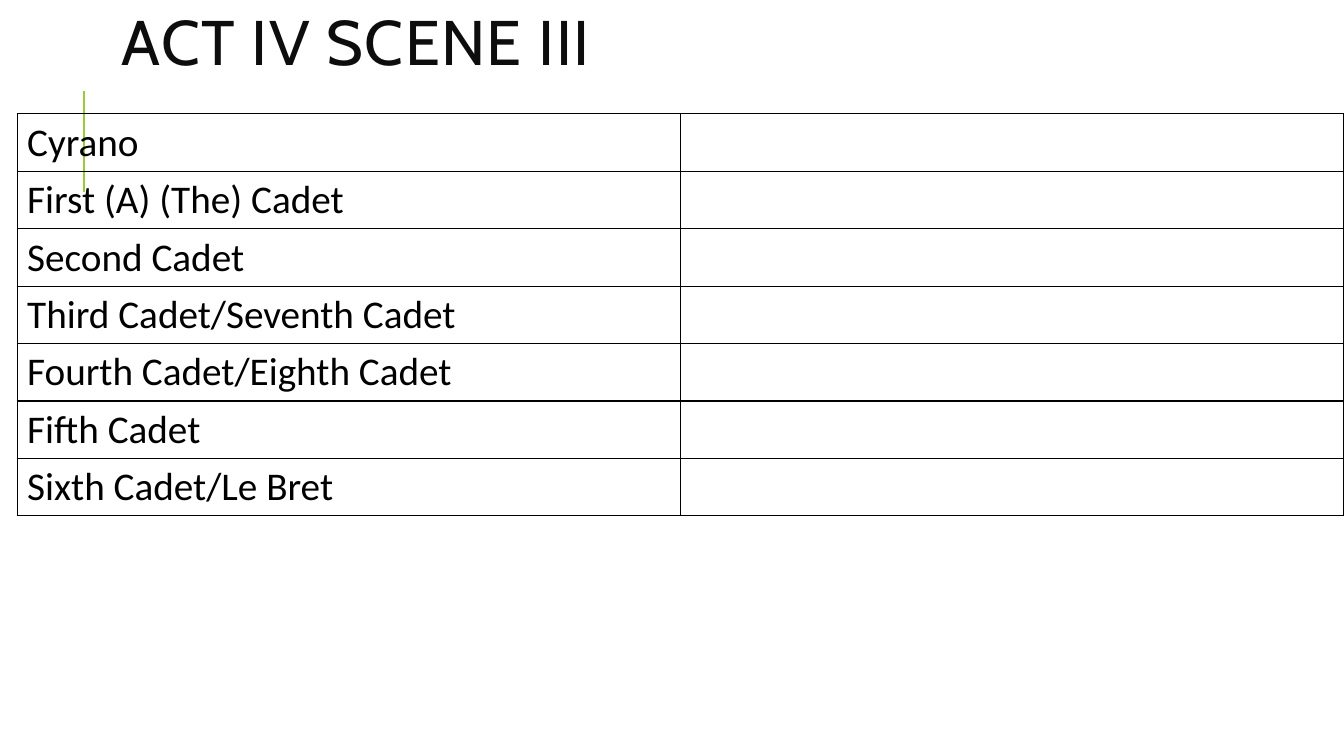
from lxml import etree
from pptx import Presentation
from pptx.dml.color import RGBColor
from pptx.enum.shapes import MSO_CONNECTOR
from pptx.enum.text import MSO_ANCHOR
from pptx.oxml.ns import qn
from pptx.util import Inches, Pt

STRAIGHT = MSO_CONNECTOR.STRAIGHT
MIDDLE = MSO_ANCHOR.MIDDLE

HEADING = "ACT IV SCENE III"
ROLES = [
    "Cyrano",
    "First (A) (The) Cadet",
    "Second Cadet",
    "Third Cadet/Seventh Cadet",
    "Fourth Cadet/Eighth Cadet",
    "Fifth Cadet",
    "Sixth Cadet/Le Bret",
]
BLACK, INK, GREEN = "000000", "0D0D0D", "99CB38"
COLUMN_WIDTH, ROW_HEIGHT = 6.58, 0.57


def color(hex_code):
    return RGBColor.from_string(hex_code)


def style(font, name, size, hex_code):
    font.name = name
    font.size = Pt(size)
    font.color.rgb = color(hex_code)


def add_borders(cell, hex_code, points):
    properties = cell._tc.get_or_add_tcPr()
    for position, side in enumerate(("lnL", "lnR", "lnT", "lnB")):
        border = etree.Element(qn(f"a:{side}"), w=str(Pt(points)))
        fill = etree.SubElement(border, qn("a:solidFill"))
        etree.SubElement(fill, qn("a:srgbClr"), val=hex_code)
        properties.insert(position, border)


def add_accent(slide):
    accent = slide.shapes.add_connector(
        STRAIGHT, Inches(0.83), Inches(1.9), Inches(0.83), Inches(0.9))
    accent.line.color.rgb = color(GREEN)
    accent.line.width = Pt(1.5)
    etree.SubElement(accent._element.spPr, qn("a:effectLst"))


def add_heading(slide):
    heading = slide.shapes.add_textbox(
        Inches(1.11), Inches(0.12), Inches(10.63), Inches(0.7)).text_frame
    heading.word_wrap = True
    heading.vertical_anchor = MIDDLE
    line = heading.paragraphs[0]
    line.text = HEADING
    line.line_spacing = 0.8
    style(line.font, "Cabin", 45, INK)
    line.runs[0].font._element.set("spc", "100")


def add_cast_table(slide):
    cast = slide.shapes.add_table(
        len(ROLES), 2, Inches(0.17), Inches(1.13),
        Inches(2 * COLUMN_WIDTH), Inches(len(ROLES) * ROW_HEIGHT)).table
    cast.first_row = cast.horz_banding = False
    for column in cast.columns:
        column.width = Inches(COLUMN_WIDTH)
    for row, role in zip(cast.rows, ROLES):
        row.height = Inches(ROW_HEIGHT)
        for cell, words in zip(row.cells, (role, "")):
            cell.text = words
            style(cell.text_frame.paragraphs[0].font, "Calibri", 28, BLACK)
            cell.fill.background()
            add_borders(cell, BLACK, 1)


def main():
    deck = Presentation()
    deck.slide_width, deck.slide_height = Inches(13.33), Inches(7.5)
    slide = deck.slides.add_slide(deck.slide_layouts[6])
    add_accent(slide)
    add_heading(slide)
    add_cast_table(slide)
    deck.save("out.pptx")


if __name__ == "__main__":
    main()
